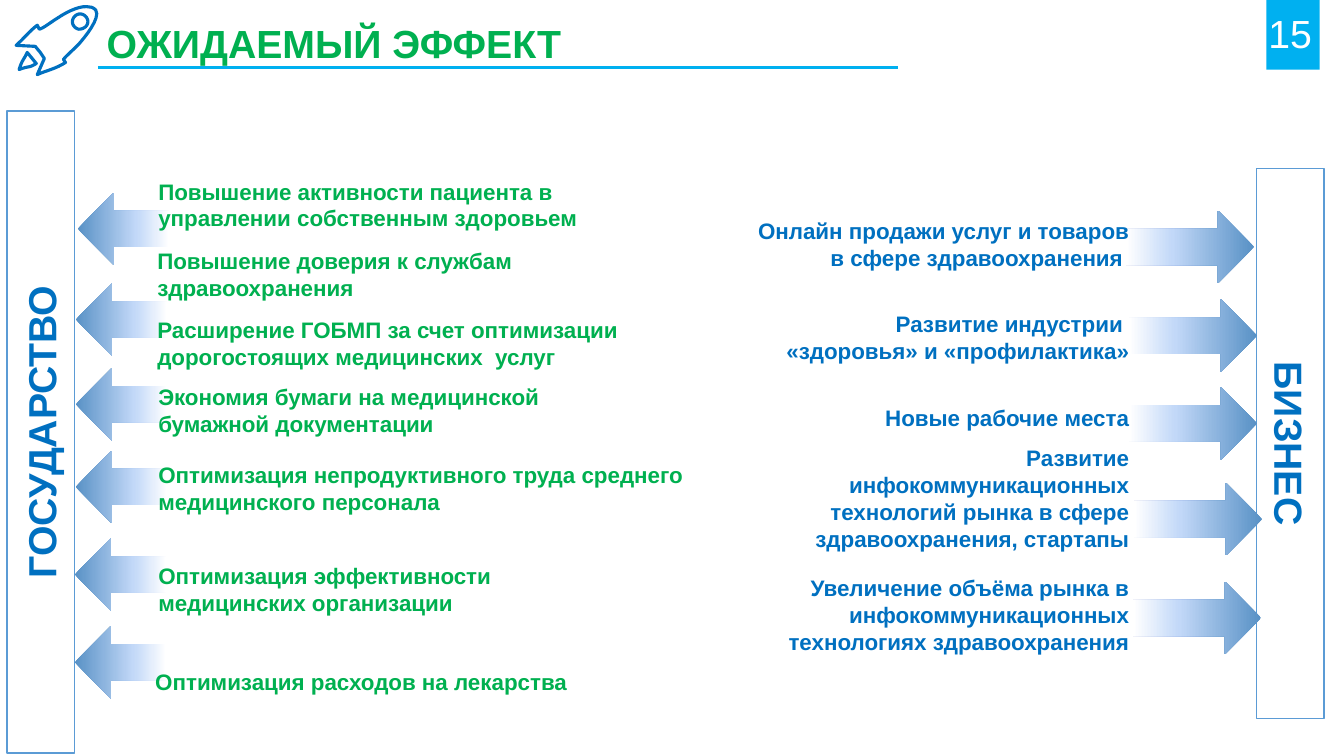
from lxml import etree
from pptx import Presentation
from pptx.dml.color import RGBColor
from pptx.enum import shapes, text
from pptx.oxml import ns
from pptx.util import Inches, Pt

GREEN = RGBColor(0x00, 0xB0, 0x50)
BLUE = RGBColor(0x00, 0x70, 0xC0)
SKY = RGBColor(0x00, 0xB0, 0xF0)
BORDER = RGBColor(0x5B, 0x9B, 0xD5)
WHITE = RGBColor(0xFF, 0xFF, 0xFF)
ARROW_STOPS = [(0, RGBColor(0x58, 0x91, 0xC5)), (64, RGBColor(0xC2, 0xD8, 0xF8)), (100, WHITE)]
LEFT, CENTER, RIGHT = text.PP_ALIGN.LEFT, text.PP_ALIGN.CENTER, text.PP_ALIGN.RIGHT
LINE_HEIGHT = 0.27

STATE_EFFECTS = [
    (1.57, 1.76, 4.73, 2, ["Повышение активности пациента в управлении собственным здоровьем"]),
    (1.56, 2.45, 4.89, 2, ["Повышение доверия к службам здравоохранения"]),
    (1.56, 3.13, 4.81, 2, ["Расширение ГОБМП за счет оптимизации дорогостоящих медицинских  услуг"]),
    (1.57, 3.8, 4.73, 2, ["Экономия бумаги на медицинской бумажной документации"]),
    (1.57, 4.57, 5.37, 2, ["Оптимизация непродуктивного труда среднего медицинского персонала"]),
    (1.57, 5.57, 4.73, 2, ["Оптимизация эффективности медицинских организации"]),
    (1.54, 6.63, 4.73, 1, ["Оптимизация расходов на лекарства"]),
]
BUSINESS_EFFECTS = [
    (7.47, 2.15, 3.73, 2, ["Онлайн продажи услуг и товаров в сфере здравоохранения "]),
    (7.47, 3.07, 3.73, 2, ["Развитие индустрии ", "«здоровья» и «профилактика»"]),
    (7.47, 4.01, 3.73, 1, ["Новые рабочие места"]),
    (7.47, 4.4, 3.73, 4, ["Развитие инфокоммуникационных технологий рынка в сфере здравоохранения, стартапы"]),
    (7.47, 5.69, 3.73, 3, ["Увеличение объёма рынка в инфокоммуникационных технологиях здравоохранения"]),
]
STATE_ARROWS = [(0.77, 1.91), (0.75, 2.81), (0.75, 3.65), (0.75, 4.47), (0.74, 5.34), (0.74, 6.21)]
BUSINESS_ARROWS = [(11.17, 2.09), (11.2, 2.97), (11.2, 3.84), (11.25, 4.79), (11.24, 5.77)]

FLAME = [
    [(0.27, 0.52)], [(0.36, 0.63)],
    [(0.28, 0.68), (0.29, 0.65), (0.19, 0.69)],
    [(0.22, 0.59), (0.24, 0.59), (0.27, 0.52)],
]
WINDOW = [
    [(0.81, 0.14)],
    [(0.77, 0.13), (0.73, 0.16), (0.72, 0.2)],
    [(0.71, 0.24), (0.74, 0.28), (0.78, 0.29)],
    [(0.82, 0.29), (0.86, 0.27), (0.87, 0.23)],
    [(0.88, 0.19), (0.85, 0.15), (0.81, 0.14)],
]
HULL = [
    [(0.89, 0.07)],
    [(0.91, 0.07), (0.93, 0.08), (0.95, 0.1)],
    [(1, 0.18), (0.84, 0.37), (0.78, 0.44)],
    [(0.7, 0.52), (0.65, 0.56), (0.63, 0.59)],
    [(0.65, 0.62)],
    [(0.56, 0.68), (0.46, 0.7), (0.37, 0.74)],
    [(0.44, 0.58)], [(0.4, 0.52)], [(0.35, 0.46)], [(0.16, 0.45)],
    [(0.23, 0.39), (0.29, 0.31), (0.37, 0.25)],
    [(0.39, 0.29)],
    [(0.43, 0.28), (0.49, 0.23), (0.57, 0.18)],
    [(0.69, 0.1), (0.81, 0.05), (0.89, 0.07)],
]


def write(frame, lines, size, color, align, bold=True):
    frame.word_wrap = True
    frame.vertical_anchor = text.MSO_ANCHOR.MIDDLE
    for index, line in enumerate(lines):
        para = frame.add_paragraph() if index else frame.paragraphs[0]
        para.alignment = align
        span = para.add_run()
        span.text = line
        span.font.name = "Arial"
        span.font.size = Pt(size)
        span.font.bold = bold
        span.font.color.rgb = color


def add_label(page, left, top, width, height, lines, size, color, align, bold=True, inset=0.0):
    box = page.shapes.add_textbox(Inches(left), Inches(top), Inches(width), Inches(height))
    frame = box.text_frame
    frame.margin_left = frame.margin_right = Inches(inset)
    frame.margin_top = frame.margin_bottom = Inches(inset / 2)
    write(frame, lines, size, color, align, bold)


def add_effects(page, effects, color, align):
    for left, top, width, rows, lines in effects:
        add_label(page, left, top, width, rows * LINE_HEIGHT, lines, 16, color, align)


def add_block(page, left, top, width, height, fill):
    block = page.shapes.add_shape(
        shapes.MSO_SHAPE.RECTANGLE, Inches(left), Inches(top), Inches(width), Inches(height))
    block.shadow.inherit = False
    block.fill.solid()
    block.fill.fore_color.rgb = fill
    block.line.fill.background()
    return block


def add_side(page, left, top, height, caption, rotation):
    side = add_block(page, left, top, 0.67, height, WHITE)
    side.line.color.rgb = BORDER
    side.line.width = Pt(1)
    side.rotation = rotation
    write(side.text_frame, [caption], 28, BLUE, CENTER)
    side.text_frame._txBody.bodyPr.set("vert", "vert270")


def add_arrow(page, left, top, width, rotation):
    arrow = page.shapes.add_shape(
        shapes.MSO_SHAPE.RIGHT_ARROW, Inches(left), Inches(top), Inches(width), Inches(0.72))
    arrow.shadow.inherit = False
    arrow.line.fill.background()
    arrow.rotation = rotation
    arrow._element.spPr.find(ns.qn("a:xfrm")).set("flipH", "1")
    arrow.fill.gradient()
    arrow.fill.gradient_angle = 180
    stops = arrow._element.spPr.find(ns.qn("a:gradFill")).find(ns.qn("a:gsLst"))
    for stop in list(stops):
        stops.remove(stop)
    for position, color in ARROW_STOPS:
        stop = etree.SubElement(stops, ns.qn("a:gs"), pos=str(position * 1000))
        etree.SubElement(stop, ns.qn("a:srgbClr"), val=str(color))


def trace(contour, steps=8):
    points = list(contour[0])
    for segment in contour[1:]:
        if len(segment) == 1:
            points += segment
            continue
        curve = [points[-1], *segment]
        for step in range(1, steps + 1):
            t = step / steps
            weights = ((1 - t) ** 3, 3 * t * (1 - t) ** 2, 3 * t * t * (1 - t), t ** 3)
            points.append(tuple(sum(w * p[axis] for w, p in zip(weights, curve)) for axis in (0, 1)))
    return [(Inches(x), Inches(y)) for x, y in points]


def add_rocket(page):
    outlines = [trace(contour) for contour in (FLAME, WINDOW, HULL)]
    builder = page.shapes.build_freeform(*outlines[0][0])
    for index, outline in enumerate(outlines):
        if index:
            builder.move_to(*outline[0])
        builder.add_line_segments(outline[1:], close=True)
    rocket = builder.convert_to_shape()
    rocket.shadow.inherit = False
    rocket.fill.solid()
    rocket.fill.fore_color.rgb = WHITE
    rocket.line.color.rgb = BLUE
    rocket.line.width = Pt(2.25)


def add_title_rule(page):
    rule = page.shapes.add_connector(
        shapes.MSO_CONNECTOR.STRAIGHT, Inches(0.97), Inches(0.67), Inches(8.91), Inches(0.67))
    rule.line.color.rgb = SKY
    rule.line.width = Pt(2.25)
    etree.SubElement(rule._element.spPr, ns.qn("a:effectLst"))


def main():
    deck = Presentation()
    deck.slide_width = Inches(13.33)
    deck.slide_height = Inches(7.5)
    page = deck.slides.add_slide(deck.slide_layouts[6])

    add_block(page, 12.56, 0, 0.53, 0.69, SKY)
    add_label(page, 12.43, 0.13, 0.68, 0.4, ["15"], 28, WHITE, RIGHT, bold=False, inset=0.1)
    add_label(page, 0.96, 0.14, 11.21, 0.57, ["ОЖИДАЕМЫЙ ЭФФЕКТ"], 28, GREEN, LEFT, inset=0.1)
    add_rocket(page)
    add_title_rule(page)

    add_side(page, 0.07, 1.1, 6.37, "ГОСУДАРСТВО", 0)
    add_side(page, 12.46, 1.67, 5.46, "БИЗНЕС", 180)
    for left, top in STATE_ARROWS:
        add_arrow(page, left, top, 0.91, 0)
    for left, top in BUSINESS_ARROWS:
        add_arrow(page, left, top, 1.27, 180)
    add_effects(page, STATE_EFFECTS, GREEN, LEFT)
    add_effects(page, BUSINESS_EFFECTS, BLUE, RIGHT)

    deck.save("out.pptx")


if __name__ == "__main__":
    main()
